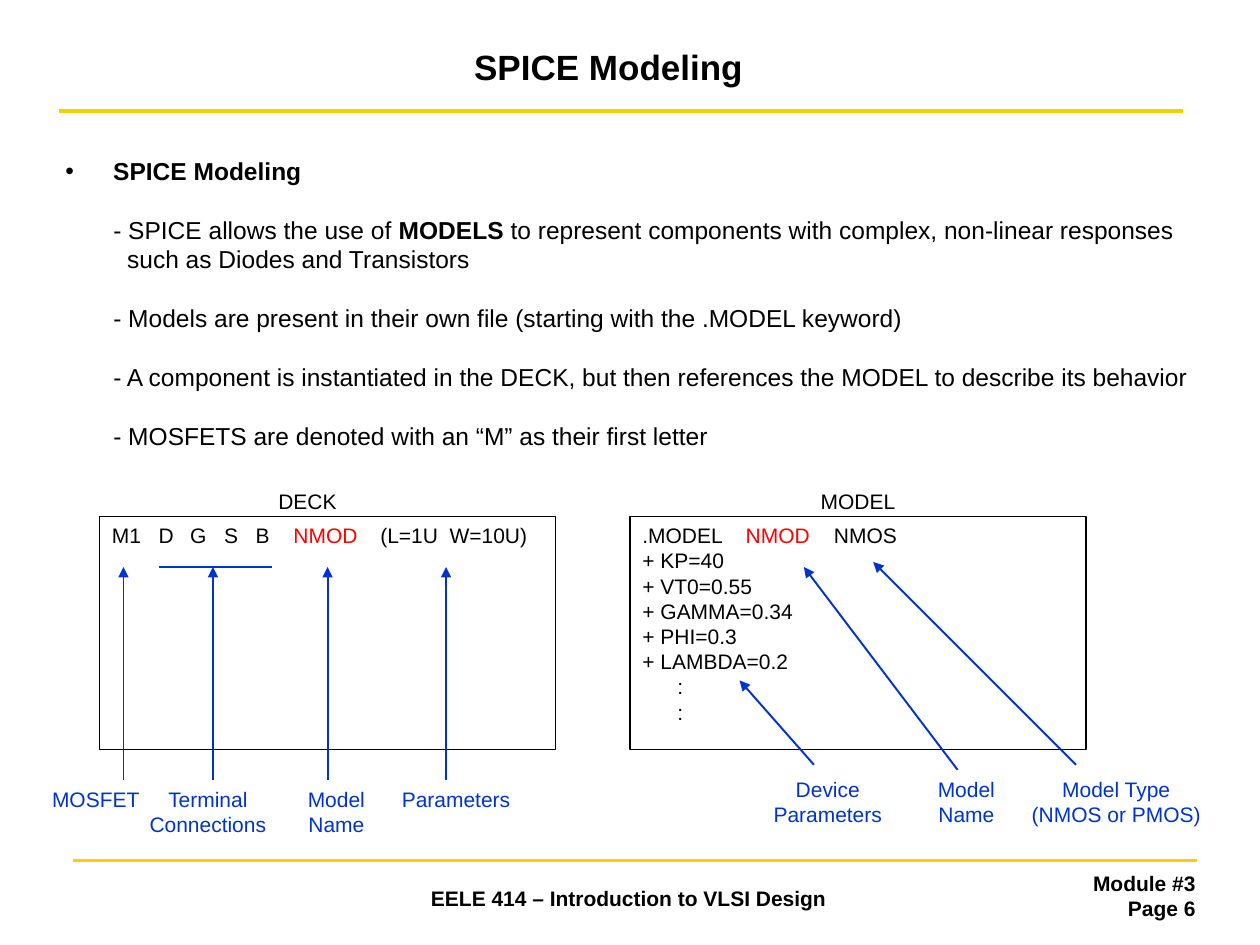
from dataclasses import dataclass

import pptx
import pptx.dml.color
import pptx.enum.shapes
import pptx.enum.text
import pptx.oxml.ns
import pptx.util
from lxml import etree

Inches = pptx.util.Inches
Pt = pptx.util.Pt
RGBColor = pptx.dml.color.RGBColor
ALIGN = pptx.enum.text.PP_ALIGN
ANCHOR = pptx.enum.text.MSO_ANCHOR
qn = pptx.oxml.ns.qn

BLACK = RGBColor(0x00, 0x00, 0x00)
RED = RGBColor(0xFF, 0x00, 0x00)
BLUE = RGBColor(0x00, 0x33, 0xCC)
GOLD = RGBColor(0xFF, 0xCC, 0x00)


@dataclass(frozen=True)
class Run:
    text: str
    color: RGBColor = BLACK
    bold: bool = False


@dataclass(frozen=True)
class Box:
    left: float
    top: float
    width: float
    height: float

    def lengths(self) -> list:
        return [Inches(value) for value in (self.left, self.top, self.width, self.height)]


@dataclass(frozen=True)
class Line:
    start: tuple[float, float]
    end: tuple[float, float]
    color: RGBColor = BLUE
    width: float = 1.1
    arrow: bool = True


@dataclass(frozen=True)
class Label:
    text: str
    box: Box
    color: RGBColor = BLUE
    size: float = 12
    bold: bool = False
    align: ALIGN = ALIGN.CENTER
    anchor: ANCHOR = ANCHOR.TOP


@dataclass(frozen=True)
class Listing:
    box: Box
    lines: list[list[Run]]
    tabs: list[float]


def add_runs(paragraph, runs: list[Run], size: float) -> None:
    for part in runs:
        for index, piece in enumerate(part.text.split("\n")):
            if index:
                paragraph.add_line_break()
            run = paragraph.add_run()
            run.text = piece
            values = {"name": "Arial", "size": Pt(size), "bold": part.bold}
            for name, value in values.items():
                setattr(run.font, name, value)
            run.font.color.rgb = part.color


def add_label(slide, label: Label) -> None:
    frame = slide.shapes.add_textbox(*label.box.lengths()).text_frame
    values = {
        "word_wrap": True,
        "margin_left": 0,
        "margin_right": 0,
        "vertical_anchor": label.anchor,
    }
    for name, value in values.items():
        setattr(frame, name, value)
    paragraph = frame.paragraphs[0]
    paragraph.alignment = label.align
    add_runs(paragraph, [Run(label.text, label.color, label.bold)], label.size)


def add_line(slide, line: Line) -> None:
    connector = slide.shapes.add_connector(
        pptx.enum.shapes.MSO_CONNECTOR.STRAIGHT,
        *(Inches(value) for value in line.start + line.end),
    )
    connector.line.color.rgb = line.color
    connector.line.width = Pt(line.width)
    if line.arrow:
        etree.SubElement(connector.line._get_or_add_ln(), qn("a:tailEnd"), type="triangle")
    etree.SubElement(connector._element.spPr, qn("a:effectLst"))


def add_listing(slide, listing: Listing) -> None:
    shape = slide.shapes.add_shape(
        pptx.enum.shapes.MSO_SHAPE.RECTANGLE, *listing.box.lengths()
    )
    shape.shadow.inherit = False
    shape.fill.background()
    shape.line.color.rgb = BLACK
    shape.line.width = Pt(0.75)
    frame = shape.text_frame
    frame.word_wrap = True
    frame.vertical_anchor = ANCHOR.TOP
    for index, runs in enumerate(listing.lines):
        paragraph = frame.add_paragraph() if index else frame.paragraphs[0]
        paragraph.alignment = ALIGN.LEFT
        stops = etree.SubElement(paragraph._p.get_or_add_pPr(), qn("a:tabLst"))
        for position in listing.tabs:
            etree.SubElement(stops, qn("a:tab"), pos=str(Inches(position)), algn="l")
        add_runs(paragraph, runs, 12)


def add_body(slide, box: Box, heading: str, points: list[list[Run]]) -> None:
    frame = slide.shapes.add_textbox(*box.lengths()).text_frame
    frame.word_wrap = True
    paragraph = frame.paragraphs[0]
    properties = paragraph._p.get_or_add_pPr()
    properties.set("marL", str(Inches(0.38)))
    properties.set("indent", str(Inches(-0.38)))
    etree.SubElement(properties, qn("a:buFont"), typeface="Arial")
    etree.SubElement(properties, qn("a:buChar"), char="•")
    add_runs(paragraph, [Run(heading, bold=True)], 14)
    for runs in points:
        paragraph = frame.add_paragraph()
        paragraph.space_before = Pt(16.8)
        properties = paragraph._p.get_or_add_pPr()
        properties.set("marL", str(Inches(0.49)))
        properties.set("indent", str(Inches(-0.11)))
        add_runs(paragraph, runs, 14)


POINTS = [
    [
        Run("- SPICE allows the use of "),
        Run("MODELS", bold=True),
        Run(" to represent components with complex, non-linear responses\n"
            "such as Diodes and Transistors"),
    ],
    [Run("- Models are present in their own file (starting with the .MODEL keyword)")],
    [Run("- A component is instantiated in the DECK, but then references "
         "the MODEL to describe its behavior")],
    [Run("- MOSFETS are denoted with an “M” as their first letter")],
]

PARAMETERS = ["+ KP=40", "+ VT0=0.55", "+ GAMMA=0.34", "+ PHI=0.3", "+ LAMBDA=0.2",
              "      :", "      :"]

LISTINGS = [
    Listing(
        Box(0.79, 4.1, 3.62, 1.85),
        [[Run("M1\tD\tG\tS\tB\t"), Run("NMOD", RED), Run("\t(L=1U\tW=10U)")]],
        [0.37, 0.62, 0.89, 1.14, 1.44, 2.13, 2.68],
    ),
    Listing(
        Box(5, 4.1, 3.62, 1.85),
        [[Run(".MODEL\t"), Run("NMOD", RED), Run("\tNMOS")]]
        + [[Run(text)] for text in PARAMETERS],
        [0.82, 1.52],
    ),
]

LINES = [
    Line((0.47, 0.88), (9.39, 0.88), GOLD, 2, False),
    Line((0.58, 6.83), (9.5, 6.83), GOLD, 2, False),
    Line((1.26, 4.5), (2.16, 4.5), arrow=False),
    *(Line((x, 6.19), (x, 4.5)) for x in (0.98, 1.69, 2.6, 3.54)),
    Line((7.6, 6.11), (6.38, 4.5)),
    Line((6.46, 6.07), (5.87, 5.4)),
    Line((8.54, 6.07), (6.93, 4.46)),
]

CALLOUTS = [
    ("MOSFET", 0.25, 6.19, 1.02),
    ("Terminal\nConnections", 1.14, 6.19, 1.02),
    ("Model\nName", 2.16, 6.19, 1.02),
    ("Parameters", 3.11, 6.19, 1.02),
    ("Device\nParameters", 6.06, 6.11, 1.02),
    ("Model\nName", 7.16, 6.11, 1.02),
    ("Model Type\n(NMOS or PMOS)", 8.11, 6.11, 1.5),
]

LABELS = [
    Label("SPICE Modeling", Box(0.58, 0.25, 8.5, 0.55), BLACK, 20, True,
          anchor=ANCHOR.MIDDLE),
    Label("Module #3\nPage 6", Box(8.03, 6.86, 1.46, 0.5), BLACK, bold=True,
          align=ALIGN.RIGHT),
    Label("EELE 414 – Introduction to VLSI Design", Box(2.68, 6.98, 4.62, 0.32),
          BLACK, bold=True),
    Label("DECK", Box(1.93, 3.83, 1.02, 0.27), BLACK),
    Label("MODEL", Box(6.3, 3.83, 1.02, 0.27), BLACK),
    *(Label(text, Box(left, top, width, 0.51)) for text, left, top, width in CALLOUTS),
]


def main() -> None:
    presentation = pptx.Presentation()
    presentation.slide_width = Inches(10)
    presentation.slide_height = Inches(7.5)
    slide = presentation.slides.add_slide(presentation.slide_layouts[6])
    add_body(slide, Box(0.42, 1.19, 9.35, 2.6), "SPICE Modeling", POINTS)
    for listing in LISTINGS:
        add_listing(slide, listing)
    for line in LINES:
        add_line(slide, line)
    for label in LABELS:
        add_label(slide, label)
    presentation.save("out.pptx")


if __name__ == "__main__":
    main()
